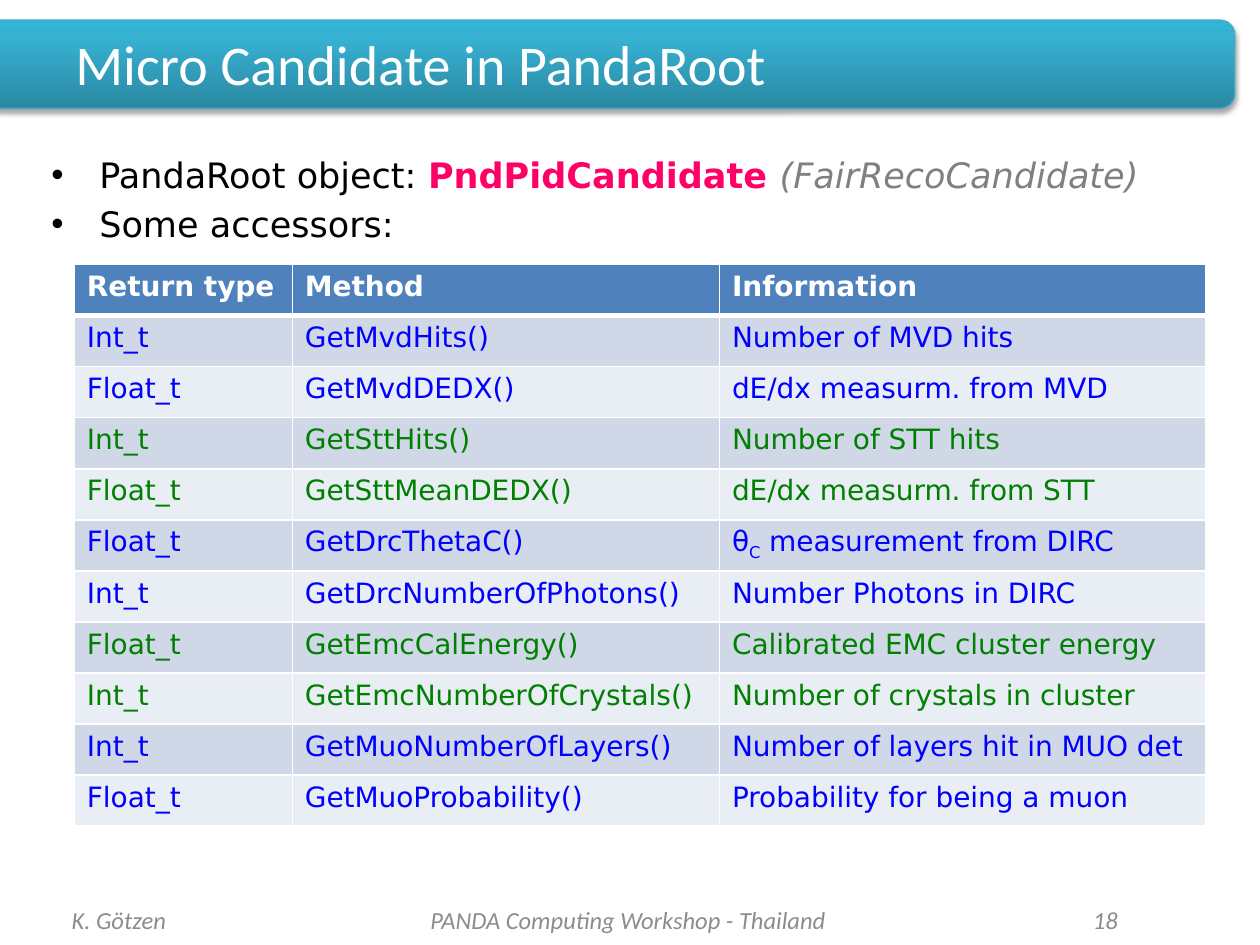
import pptx
import pptx.util
import pptx.oxml
import pptx.dml.color
import pptx.enum.shapes
import pptx.enum.text

Inches = pptx.util.Inches
Pt = pptx.util.Pt
ALIGN = pptx.enum.text.PP_ALIGN
ANCHOR = pptx.enum.text.MSO_ANCHOR
NS = 'xmlns:a="http://schemas.openxmlformats.org/drawingml/2006/main"'

COLORS = {
    "white": "FFFFFF", "black": "000000", "pink": "FF0066", "gray": "808080",
    "foot": "8C8C8C", "blue": "0000FF", "green": "008000", "edge": "46AAC5",
    "head": "4F81BD", "odd": "D0D8E8", "even": "E9EDF4",
    "deep": "2A88A2", "mid": "37B1D2", "light": "34B4D6",
}

TITLE = {"name": "Calibri", "size": Pt(32), "color": "white"}
BODY = {"name": "DejaVu Sans", "size": Pt(20), "color": "black"}
CELL = {"name": "DejaVu Sans", "size": Pt(16), "bold": False}
FOOT = {"name": "Calibri", "size": Pt(14), "italic": True, "color": "foot"}

HEAD = ["Return type", "Method", "Information"]
ROWS = [
    ("Int_t", "GetMvdHits()", "Number of MVD hits"),
    ("Float_t", "GetMvdDEDX()", "dE/dx measurm. from MVD"),
    ("Int_t", "GetSttHits()", "Number of STT hits"),
    ("Float_t", "GetSttMeanDEDX()", "dE/dx measurm. from STT"),
    ("Float_t", "GetDrcThetaC()",
     [("θ", {}), ("C", {"base": -25}), (" measurement from DIRC", {})]),
    ("Int_t", "GetDrcNumberOfPhotons()", "Number Photons in DIRC"),
    ("Float_t", "GetEmcCalEnergy()", "Calibrated EMC cluster energy"),
    ("Int_t", "GetEmcNumberOfCrystals()", "Number of crystals in cluster"),
    ("Int_t", "GetMuoNumberOfLayers()", "Number of layers hit in MUO det"),
    ("Float_t", "GetMuoProbability()", "Probability for being a muon"),
]
WIDTHS = [1.73, 3.39, 3.86]


def rgb(name):
    return pptx.dml.color.RGBColor.from_string(COLORS[name])


def parse(xml):
    return pptx.oxml.parse_xml(xml)


def write(para, text, style):
    """Add a string, or a list of (string, format) runs, to a paragraph."""
    runs = [(text, {})] if isinstance(text, str) else text
    for part, extra in runs:
        run = para.add_run()
        run.text = part
        for key, value in {**style, **extra}.items():
            if key == "color":
                run.font.color.rgb = rgb(value)
            elif key == "base":
                run.font._element.set("baseline", str(value * 1000))
            else:
                setattr(run.font, key, value)


def add_text(slide, box, anchor=ANCHOR.MIDDLE):
    frame = slide.shapes.add_textbox(*map(Inches, box)).text_frame
    frame.word_wrap = True
    frame.vertical_anchor = anchor
    return frame


def add_title(slide, box):
    left, top, width, height = box
    bar = slide.shapes.add_shape(
        pptx.enum.shapes.MSO_SHAPE.ROUNDED_RECTANGLE, *map(Inches, box))
    bar.line.color.rgb = rgb("edge")
    bar.line.width = Pt(0.75)

    # Gradient from the bottom up, and a soft shadow below
    stops = "".join(
        f'<a:gs pos="{pos * 1000}"><a:srgbClr val="{COLORS[name]}"/></a:gs>'
        for pos, name in [(0, "deep"), (80, "mid"), (100, "light")])
    props = bar._element.spPr
    props.insert(2, parse(
        f'<a:gradFill {NS} rotWithShape="1"><a:gsLst>{stops}</a:gsLst>'
        '<a:lin ang="16200000" scaled="0"/></a:gradFill>'))
    props.append(parse(
        f'<a:effectLst {NS}><a:outerShdw blurRad="{Pt(3.1)}" dist="{Pt(1.8)}" '
        f'dir="5400000" rotWithShape="0"><a:srgbClr val="{COLORS["black"]}">'
        '<a:alpha val="35000"/></a:srgbClr></a:outerShdw></a:effectLst>'))

    frame = add_text(slide, (left + 0.62, top + 0.02, 9, height - 0.06))
    write(frame.paragraphs[0], "Micro Candidate in PandaRoot", TITLE)


def add_body(slide, box):
    frame = add_text(slide, box, ANCHOR.TOP)
    lines = [
        [("PandaRoot object: ", {}),
         ("PndPidCandidate ", {"color": "pink", "bold": True}),
         ("(FairRecoCandidate)", {"color": "gray", "italic": True})],
        "Some accessors:",
    ]
    for i, line in enumerate(lines):
        para = frame.add_paragraph() if i else frame.paragraphs[0]
        props = para._p.get_or_add_pPr()
        props.set("marL", str(Inches(0.38)))
        props.set("indent", str(-Inches(0.38)))
        props.append(parse(f'<a:buFont {NS} typeface="Arial"/>'))
        props.append(parse(f'<a:buChar {NS} char="•"/>'))
        if i:
            para.space_before = Pt(4)
        write(para, line, BODY)


def set_cell(cell, text, style, fill, base):
    props = cell._tc.get_or_add_tcPr()
    for side, width in {"L": 1, "R": 1, "T": 1, "B": base}.items():
        props.append(parse(
            f'<a:ln{side} {NS} w="{Pt(width)}"><a:solidFill>'
            f'<a:srgbClr val="{COLORS["white"]}"/></a:solidFill></a:ln{side}>'))
    cell.fill.solid()
    cell.fill.fore_color.rgb = rgb(fill)
    write(cell.text_frame.paragraphs[0], text, style)


def add_grid(slide, box):
    count = len(ROWS) + 1
    grid = slide.shapes.add_table(
        count, len(HEAD), *map(Inches, box)).table
    for col, width in zip(grid.columns, WIDTHS):
        col.width = Inches(width)
    for row in grid.rows:
        row.height = Inches(box[3] / count)

    for c, text in enumerate(HEAD):
        style = {**CELL, "color": "white", "bold": True}
        set_cell(grid.cell(0, c), text, style, "head", 3)
    # Fills alternate by row, text colours by pair of rows
    for r, row in enumerate(ROWS):
        style = {**CELL, "color": ("blue", "green")[r // 2 % 2]}
        for c, text in enumerate(row):
            set_cell(grid.cell(r + 1, c), text, style,
                     ("odd", "even")[r % 2], 1)


def add_foot(slide, box):
    left, top, _, height = box
    parts = [
        (0, 2.33, "K. Götzen", ALIGN.LEFT),
        (2.56, 3.91, "PANDA Computing Workshop - Thailand", ALIGN.CENTER),
        (7.03, 1.47, "18", ALIGN.RIGHT),
    ]
    for shift, width, text, align in parts:
        frame = add_text(slide, (left + shift, top, width, height))
        frame.paragraphs[0].alignment = align
        write(frame.paragraphs[0], text, FOOT)


def main():
    deck = pptx.Presentation()
    deck.slide_width, deck.slide_height = Inches(10), Inches(7.5)
    slide = deck.slides.add_slide(deck.slide_layouts[6])
    add_title(slide, (-0.12, 0.16, 9.92, 0.7))
    add_body(slide, (0.31, 1.17, 9.38, 5.78))
    add_foot(slide, (0.47, 7.1, 8.5, 0.4))
    add_grid(slide, (0.59, 2.1, 8.98, 4.46))
    deck.save("out.pptx")


if __name__ == "__main__":
    main()
